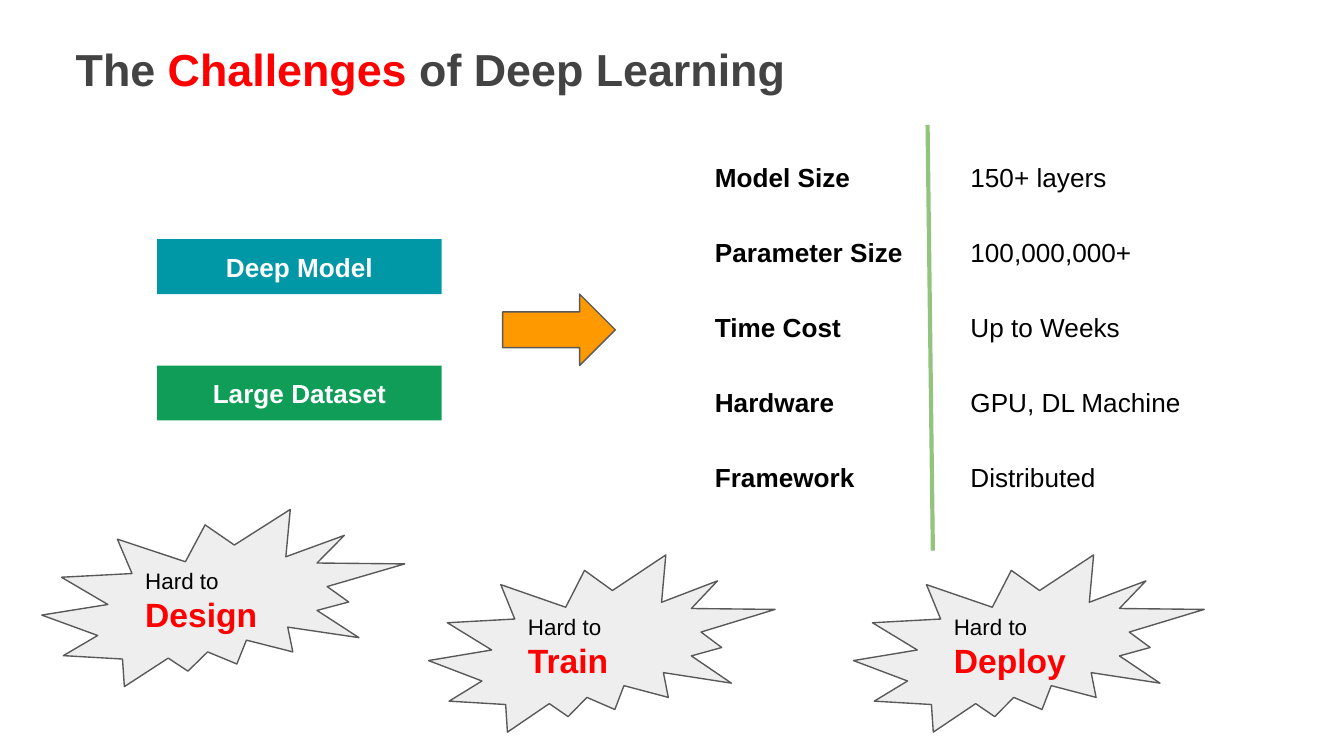
from lxml import etree
from pptx import Presentation
from pptx import util as u
from pptx.dml.color import RGBColor
from pptx.enum import shapes, text
from pptx.oxml import ns

COLORS = {
    "heading": "434343", "accent": "FF0000", "black": "000000", "white": "FFFFFF",
    "model": "0097A7", "dataset": "0F9D58", "arrow": "FF9900",
    "burst": "EEEEEE", "outline": "595959", "divider": "93C47D",
}
TITLE = [("The ", "heading"), ("Challenges ", "accent"), ("of Deep Learning", "heading")]
INPUTS = [("Deep Model", "model"), ("Large Dataset", "dataset")]
FACTS = [
    ("Model Size", "150+ layers"),
    ("Parameter Size", "100,000,000+"),
    ("Time Cost", "Up to Weeks"),
    ("Hardware", "GPU, DL Machine"),
    ("Framework", "Distributed"),
]
BURSTS = [
    ("Design", 0.79, 9.63, 6.86),
    ("Train", 8.1, 10.49, 6.55),
    ("Deploy", 16.13, 10.49, 6.63),
]
INSET = u.Cm(0.25)
MARGINS = dict.fromkeys(("margin_left", "margin_top", "margin_right", "margin_bottom"), INSET)
FRAME = {
    **MARGINS,
    "word_wrap": True,
    "auto_size": text.MSO_AUTO_SIZE.NONE,
    "vertical_anchor": text.MSO_ANCHOR.MIDDLE,
}


def apply_format(target, values):
    for name, value in values.items():
        setattr(target, name, value)


def color(name):
    return RGBColor.from_string(COLORS[name])


def add_run(paragraph, words, size, color_name, bold=False):
    run = paragraph.add_run()
    run.text = words
    apply_format(run.font, {"name": "Arial", "size": u.Pt(size), "bold": bold})
    run.font.color.rgb = color(color_name)


def add_shape(slide, kind, box, fill, outline=None):
    shape = slide.shapes.add_shape(kind, *map(u.Cm, box))
    shape.shadow.inherit = False
    shape.fill.solid()
    shape.fill.fore_color.rgb = color(fill)
    if outline:
        shape.line.color.rgb = color(outline)
        shape.line.width = u.Pt(0.75)
    else:
        shape.line.fill.background()
    apply_format(shape.text_frame, FRAME)
    return shape


def add_title(slide):
    title = slide.shapes.title
    box = (1.18, 0.46, 16.66, 1.68)
    apply_format(title, dict(zip(("left", "top", "width", "height"), map(u.Cm, box))))
    apply_format(title.text_frame, FRAME)
    paragraph = title.text_frame.paragraphs[0]
    paragraph.alignment = text.PP_ALIGN.LEFT
    for words, color_name in TITLE:
        add_run(paragraph, words, 24, color_name, True)


def add_inputs(slide):
    for index, (words, fill) in enumerate(INPUTS):
        box = (2.97, 4.52 + index * 2.39, 5.38, 1.04)
        shape = add_shape(slide, shapes.MSO_SHAPE.RECTANGLE, box, fill)
        paragraph = shape.text_frame.paragraphs[0]
        paragraph.alignment = text.PP_ALIGN.CENTER
        add_run(paragraph, words, 14, "white", True)


def add_facts(slide):
    box = (13.26, 2.84, 9.66, 1.42 * len(FACTS))
    table = slide.shapes.add_table(len(FACTS), 2, *map(u.Cm, box)).table
    apply_format(table, {"first_row": False, "horz_banding": False})
    for row, fact in enumerate(FACTS):
        for column, words in enumerate(fact):
            cell = table.cell(row, column)
            cell.fill.background()
            apply_format(cell, MARGINS)
            add_run(cell.text_frame.paragraphs[0], words, 14, "black", column == 0)


def add_bursts(slide):
    for words, left, top, width in BURSTS:
        box = (left, top, width, 3.35)
        shape = add_shape(slide, shapes.MSO_SHAPE.EXPLOSION2, box, "burst", "outline")
        frame = shape.text_frame
        add_run(frame.paragraphs[0], "Hard to", 12, "black")
        add_run(frame.add_paragraph(), words, 18, "accent", True)
        for paragraph in frame.paragraphs:
            paragraph.alignment = text.PP_ALIGN.LEFT


def add_divider(slide):
    ends = map(u.Cm, (17.53, 2.36, 17.63, 10.41))
    divider = slide.shapes.add_connector(shapes.MSO_CONNECTOR.STRAIGHT, *ends)
    divider.line.color.rgb = color("divider")
    divider.line.width = u.Pt(2.25)
    etree.SubElement(divider._element.spPr, ns.qn("a:effectLst"))


def main():
    presentation = Presentation()
    apply_format(presentation, {"slide_width": u.Cm(25.4), "slide_height": u.Cm(14.29)})
    slide = presentation.slides.add_slide(presentation.slide_layouts[5])
    add_title(slide)
    add_inputs(slide)
    add_facts(slide)
    add_shape(slide, shapes.MSO_SHAPE.RIGHT_ARROW, (9.5, 5.56, 2.13, 1.35), "arrow", "outline")
    add_bursts(slide)
    add_divider(slide)
    presentation.save("out.pptx")


if __name__ == "__main__":
    main()
